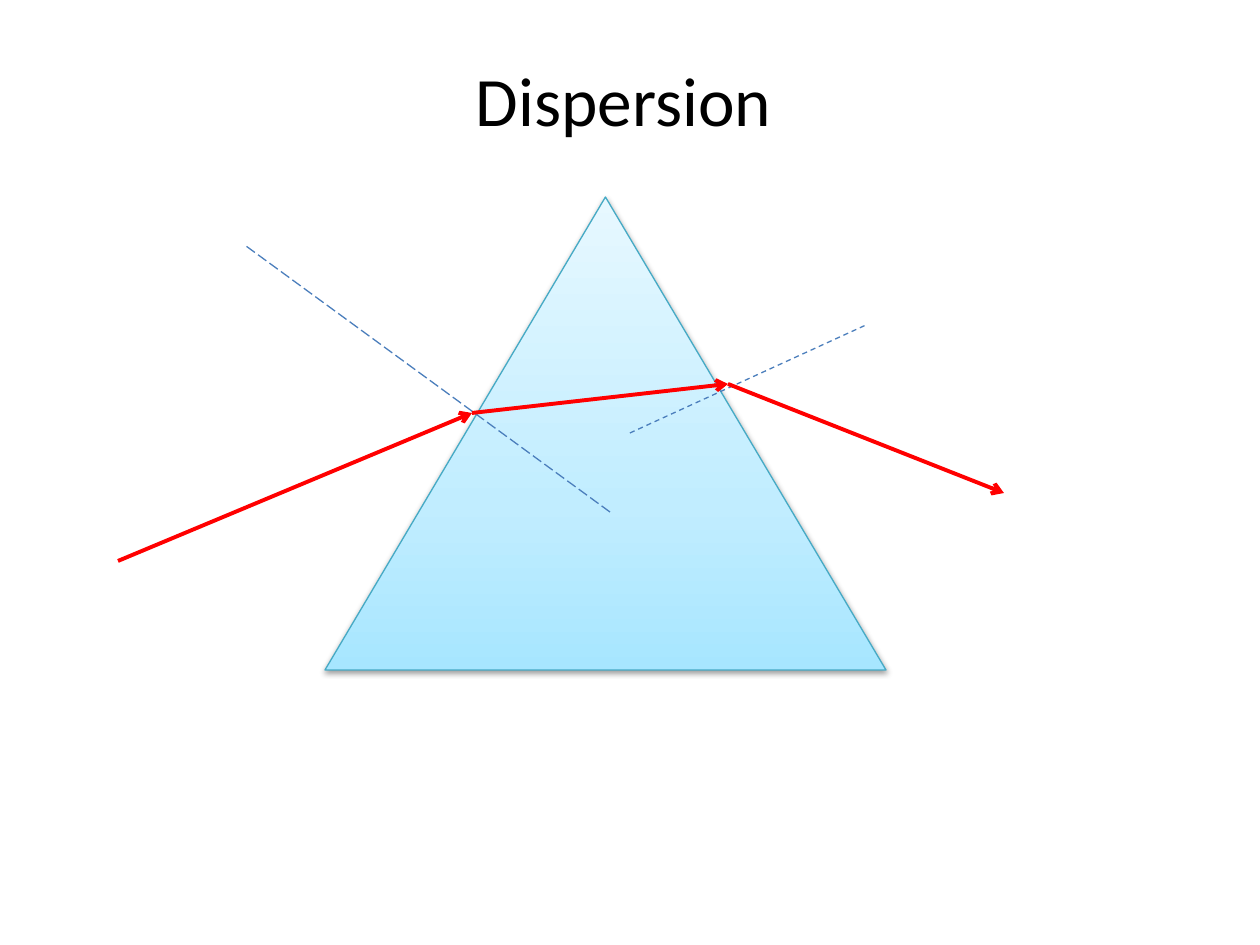
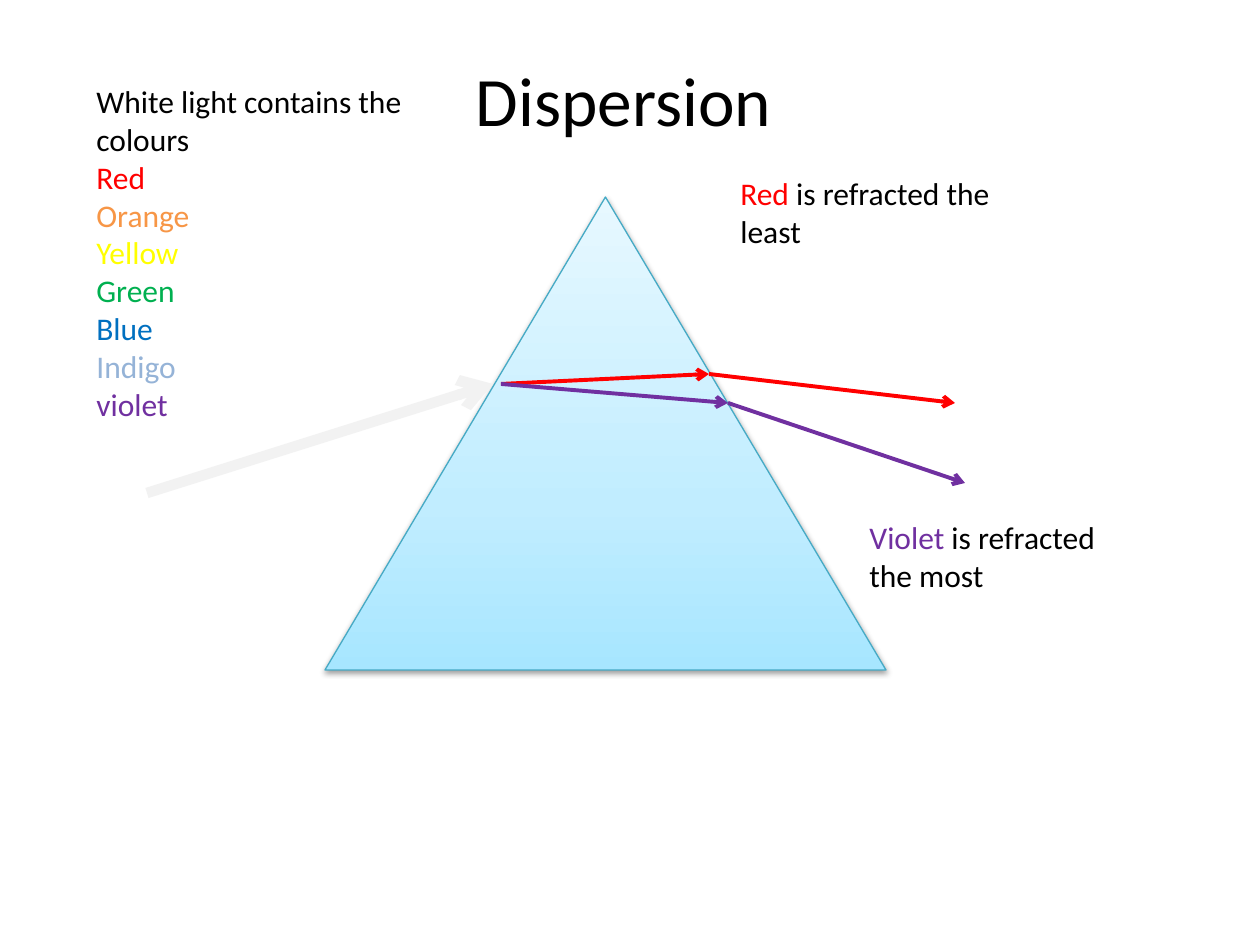
from copy import deepcopy

from lxml import etree
from pptx import Presentation
from pptx import util as u
from pptx.dml.color import RGBColor
from pptx.enum import dml, shapes, text
from pptx.oxml.ns import qn

PX = 914400 // 126  # EMU in one px
BLACK, RED, VIOLET = "000000", "FF0000", "7030A0"
NORMAL, WHITE_LIGHT = "4B7EBC", "F2F2F2"
GLASS = [(0, "A7E6FF"), (0.35, "C1EDFF"), (1, "E7F8FF")]
GLASS_EDGE = "46AAC5"


def rgb(value):
    return RGBColor.from_string(value)


def add_text(page, paragraphs, place, size=18, align=text.PP_ALIGN.LEFT,
             anchor=text.MSO_ANCHOR.TOP, fit=text.MSO_AUTO_SIZE.SHAPE_TO_FIT_TEXT):
    """Each paragraph is a list of (words, colour) pairs."""
    box = page.shapes.add_textbox(*(PX * n for n in place))
    frame = box.text_frame
    frame.word_wrap, frame.auto_size, frame.vertical_anchor = True, fit, anchor
    for number, spans in enumerate(paragraphs):
        para = frame.add_paragraph() if number else frame.paragraphs[0]
        para.alignment = align
        for words, colour in spans:
            span = para.add_run()
            span.text = words
            span.font.name, span.font.size = "Calibri", u.Pt(size)
            span.font.color.rgb = rgb(colour)


# Light paths: start, end, colour, width in points, dash (None is a ray with an arrow)
LONG, SHORT = dml.MSO_LINE.LONG_DASH, dml.MSO_LINE.DASH
entry, leave = (472, 413), (728, 384)
single_ray = [
    ((118, 561), entry, RED, 2.25, None),
    ((610, 512), (246, 246), NORMAL, 0.75, LONG),
    (entry, leave, RED, 2.25, None),
    ((630, 433), (866, 325), NORMAL, 0.75, SHORT),
    (leave, (1004, 493), RED, 2.25, None),
]
split, red_leave, violet_leave = (501, 384), (709, 374), (728, 403)
spectrum = [
    ((147, 493), (493, 384), WHITE_LIGHT, 6, None),
    (split, red_leave, RED, 2.25, None),
    (red_leave, (955, 403), RED, 2.25, None),
    (split, violet_leave, VIOLET, 2.25, None),
    (violet_leave, (965, 483), VIOLET, 2.25, None),
]

# Notes beside the prism: paragraphs and place
colours = [
    ("White light contains the colours", BLACK), ("Red", RED), ("Orange", "F79646"),
    ("Yellow", "FFFF00"), ("Green", "00B050"), ("Blue", "0070C0"),
    ("Indigo", "95B3D7"), ("violet", VIOLET),
]
spectrum_notes = [
    ([[pair] for pair in colours], (84, 76, 335, 357)),
    ([[("Red ", RED), ("is refracted the least", BLACK)]], (728, 168, 276, 89)),
    ([[("Violet ", VIOLET), ("is refracted the most", BLACK)]], (857, 512, 256, 89)),
]

deck = Presentation()
deck.slide_width, deck.slide_height = u.Inches(10), u.Inches(7.5)

for paths, notes in [(single_ray, []), (spectrum, spectrum_notes)]:
    page = deck.slides.add_slide(deck.slide_layouts[6])

    # Title
    add_text(page, [[("Dispersion", BLACK)]], (88, 59, 1071, 79), size=39.6,
             align=text.PP_ALIGN.CENTER, anchor=text.MSO_ANCHOR.MIDDLE,
             fit=text.MSO_AUTO_SIZE.NONE)

    # Glass prism with a three-stop gradient
    prism = page.shapes.add_shape(shapes.MSO_SHAPE.ISOSCELES_TRIANGLE,
                                  *(PX * n for n in (325, 197, 561, 473)))
    prism.line.color.rgb, prism.line.width = rgb(GLASS_EDGE), u.Pt(0.75)
    prism.fill.gradient()
    prism.fill.gradient_angle = 90
    stops = prism._element.spPr.find(".//" + qn("a:gsLst"))
    stops.append(deepcopy(stops[-1]))
    for stop, (position, colour) in zip(prism.fill.gradient_stops, GLASS):
        stop.position, stop.color.rgb = position, rgb(colour)

    # Soft shadow below the prism
    prism.shadow.inherit = False
    effects = prism._element.spPr.find(qn("a:effectLst"))
    shadow = etree.SubElement(effects, qn("a:outerShdw"), blurRad="40000",
                              dist="20000", dir="5400000", rotWithShape="0")
    shade = etree.SubElement(shadow, qn("a:srgbClr"), val=BLACK)
    etree.SubElement(shade, qn("a:alpha"), val="38000")

    # Rays and normals
    for start, end, colour, width, dash in paths:
        ray = page.shapes.add_connector(shapes.MSO_CONNECTOR.STRAIGHT,
                                        *(PX * n for n in start + end))
        ray.line.color.rgb, ray.line.width = rgb(colour), u.Pt(width)
        if dash:
            ray.line.dash_style = dash
        else:
            etree.SubElement(ray.line._get_or_add_ln(), qn("a:tailEnd"), type="arrow")
        etree.SubElement(ray._element.spPr, qn("a:effectLst"))

    for paragraphs, place in notes:
        add_text(page, paragraphs, place)

deck.save("out.pptx")
